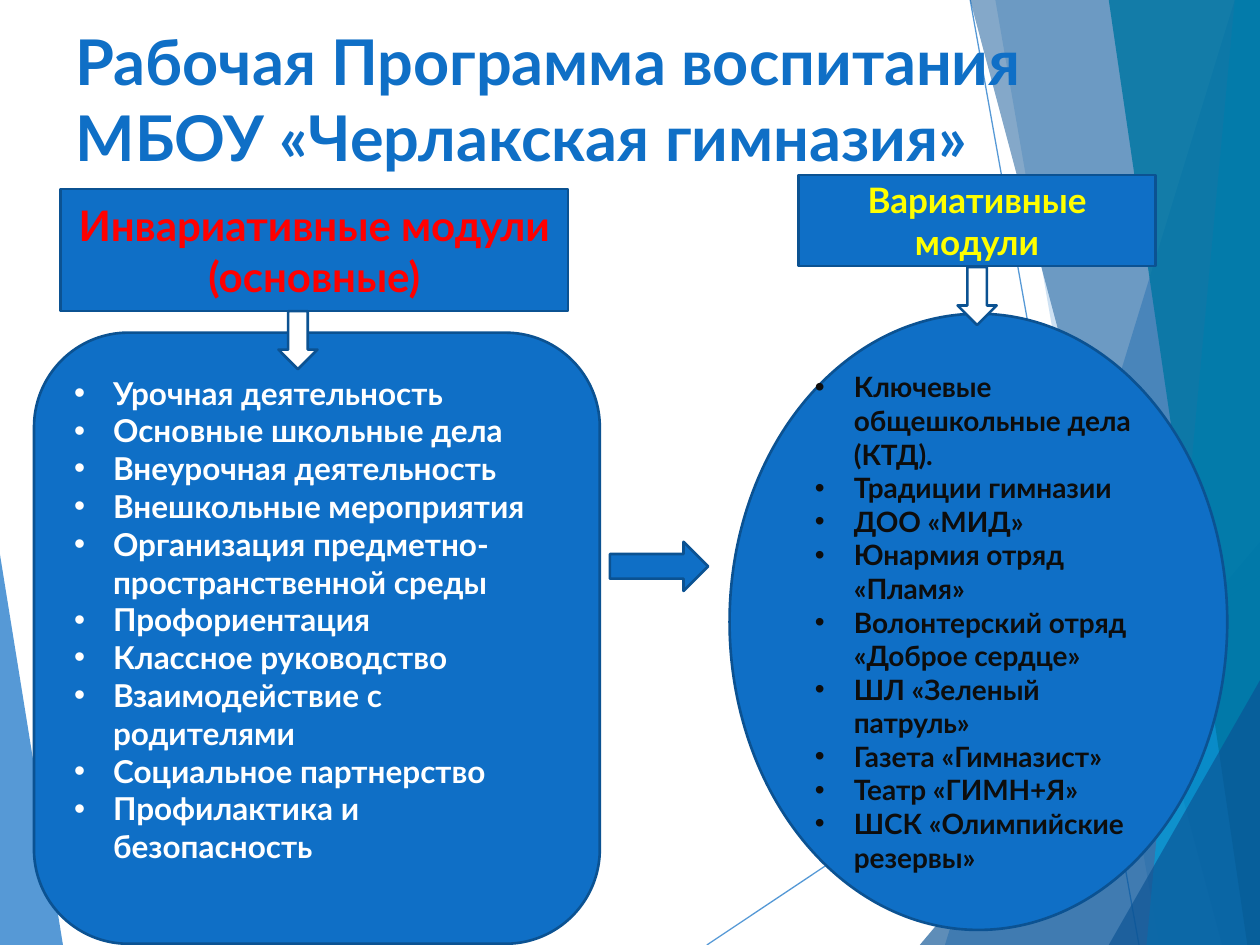
from lxml.etree import SubElement as Sub
from pptx import Presentation
from pptx.dml.color import RGBColor as Rgb
from pptx.enum.shapes import MSO_CONNECTOR as Conn, MSO_SHAPE as Kind
from pptx.enum.text import MSO_ANCHOR as Anchor, PP_ALIGN as Align
from pptx.oxml.ns import qn
from pptx.util import Inches, Pt

# The grid has 100 columns and 75 rows, each a tenth of an inch
CELL = Inches(0.1)
COLS, ROWS = 100, 75
FONT = "Lato"
BLUE, NAVY, EDGE, WHITE = "0F6FC6", "0B5394", "0B5292", "FFFFFF"
INDENT = Inches(0.31)

# Translucent panels: colour, opacity in percent, corner points
PANELS = [
    (BLUE, 70, [(0, 43.9), (4.9, ROWS), (0, ROWS)]),
    (BLUE, 36, [(97.5, 0), (75.4, ROWS), (COLS, ROWS), (COLS, 0)]),
    (BLUE, 20, [(78.8, 0), (91.9, ROWS), (COLS, ROWS), (COLS, 0)]),
    (NAVY, 66, [(72.6, ROWS), (COLS, 42.9), (COLS, ROWS)]),
    (NAVY, 50, [(76.7, 0), (97, ROWS), (COLS, ROWS), (COLS, 0)]),
    ("009DD9", 70, [(98.1, 0), (90.7, ROWS), (COLS, ROWS), (COLS, 0)]),
    ("0076A3", 82, [(88.5, 0), (98.8, ROWS), (COLS, ROWS), (COLS, 0)]),
    (NAVY, 66, [(88.2, ROWS), (COLS, 53.7), (COLS, ROWS)]),
]
RAYS = [((56.1, ROWS), (COLS, 45.7)), ((77, 0), (90.4, ROWS))]

CORE = [
    "Урочная деятельность",
    "Основные школьные дела",
    "Внеурочная деятельность",
    "Внешкольные мероприятия",
    "Организация предметно-пространственной среды",
    "Профориентация",
    "Классное руководство",
    "Взаимодействие с родителями",
    "Социальное партнерство",
    "Профилактика и безопасность",
]
EXTRA = [
    "Ключевые общешкольные дела (КТД).",
    "Традиции гимназии",
    "ДОО «МИД»",
    "Юнармия отряд «Пламя»",
    "Волонтерский отряд «Доброе сердце»",
    "ШЛ «Зеленый патруль»",
    "Газета «Гимназист»",
    "Театр «ГИМН+Я»",
    "ШСК «Олимпийские резервы»",
]


def grid(*cells):
    return [round(c * CELL) for c in cells]


def tint(part, color, alpha=100):
    """Set a solid colour on a fill, with opacity in percent."""
    part.solid()
    part.fore_color.rgb = Rgb.from_string(color)
    if alpha < 100:
        tone = part.fore_color._xFill.find(qn("a:srgbClr"))
        Sub(tone, qn("a:alpha")).set("val", str(alpha * 1000))


def add_run(para, text, size, color):
    run = para.add_run()
    run.text = text
    run.font.name, run.font.size, run.font.bold = FONT, Pt(size), True
    tint(run.font.fill, color)


def add_panel(group, color, alpha, points):
    pen = group.shapes.build_freeform(*points[0], scale=CELL)
    pen.add_line_segments(points[1:], close=True)
    panel = pen.convert_to_shape()
    panel.shadow.inherit = False
    tint(panel.fill, color, alpha)
    panel.line.fill.background()


def add_ray(group, start, end):
    ray = group.shapes.add_connector(Conn.STRAIGHT, *grid(*start, *end))
    ray.line.width = Pt(0.75)
    tint(ray.line.fill, BLUE, 70)
    Sub(ray._element.spPr, qn("a:effectLst"))


def add_decor(slide):
    group = slide.shapes.add_group_shape()
    add_panel(group, *PANELS[0])
    for ray in RAYS:
        add_ray(group, *ray)
    for panel in PANELS[1:]:
        add_panel(group, *panel)
    # Send the group behind the title
    slide.shapes._spTree.insert(2, group._element)


def add_title(slide, text):
    title = slide.shapes.title
    title.left, title.top, title.width, title.height = grid(5, 1.3, 90, 11)
    frame = title.text_frame
    frame.word_wrap = True
    frame.vertical_anchor = Anchor.TOP
    para = frame.paragraphs[0]
    para.alignment = Align.LEFT
    add_run(para, text, 36, BLUE)


def add_block(slide, kind, box, fill=BLUE):
    block = slide.shapes.add_shape(kind, *grid(*box))
    block.shadow.inherit = False
    tint(block.fill, fill)
    tint(block.line.fill, EDGE)
    block.line.width = Pt(1.5)
    return block


def add_head(slide, box, text, size, color):
    frame = add_block(slide, Kind.RECTANGLE, box).text_frame
    frame.word_wrap = True
    frame.vertical_anchor = Anchor.MIDDLE
    para = frame.paragraphs[0]
    para.alignment = Align.CENTER
    add_run(para, text, size, color)


def add_list(slide, kind, box, items, size, color, foot=0.05):
    frame = add_block(slide, kind, box).text_frame
    frame.word_wrap = True
    frame.vertical_anchor = Anchor.MIDDLE
    frame.margin_bottom = Inches(foot)
    for i, item in enumerate(items):
        para = frame.add_paragraph() if i else frame.paragraphs[0]
        para.alignment = Align.LEFT
        props = para._p.get_or_add_pPr()
        props.set("marL", str(INDENT))
        props.set("indent", str(-INDENT))
        Sub(props, qn("a:buFont")).set("typeface", "Arial")
        Sub(props, qn("a:buChar")).set("char", "•")
        add_run(para, item, size, color)


def main():
    deck = Presentation()
    deck.slide_width, deck.slide_height = grid(COLS, ROWS)
    slide = deck.slides.add_slide(deck.slide_layouts[5])
    add_decor(slide)
    add_title(slide, "Рабочая Программа воспитания МБОУ «Черлакская гимназия»")

    # Core modules on the left, optional ones on the right
    add_list(slide, Kind.ROUNDED_RECTANGLE, (2.7, 26.4, 44.9, 48.5),
             CORE, 18, WHITE, foot=0.35)
    add_head(slide, (4.8, 15, 40.3, 9.7),
             "Инвариативные модули (основные)", 24, "FF0000")
    add_block(slide, Kind.RIGHT_ARROW, (48.4, 43, 7.8, 3.9))
    add_list(slide, Kind.OVAL, (57.9, 24.9, 39.5, 48.9),
             EXTRA, 16, "0D0D0D")
    add_head(slide, (63.4, 13.9, 28.3, 7.2),
             "Вариативные модули", 20, "FFFF00")

    # Arrows from each heading to its list
    for left, top in [(22.1, 24.7), (76, 21.2)]:
        add_block(slide, Kind.DOWN_ARROW, (left, top, 3.1, 4.6), WHITE)
    deck.save("out.pptx")


if __name__ == "__main__":
    main()
